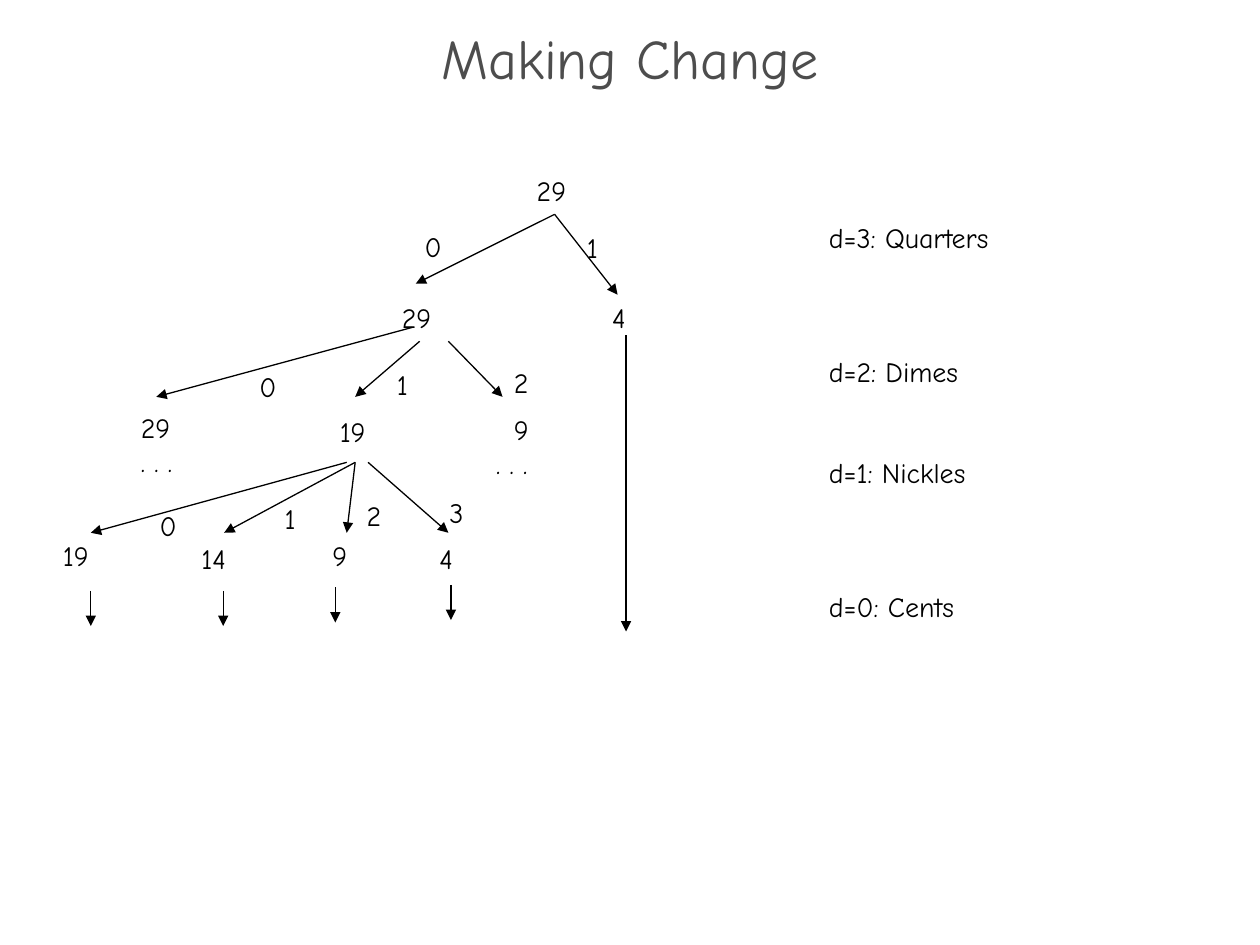
"""Build the Making Change slide: a coin-counting recursion tree."""
from lxml import etree
from pptx import Presentation
from pptx.dml.color import RGBColor
from pptx.enum.shapes import MSO_CONNECTOR
from pptx.enum.text import MSO_ANCHOR, MSO_AUTO_SIZE, PP_ALIGN
from pptx.oxml.ns import qn
from pptx.util import Cm, Pt

STRAIGHT = MSO_CONNECTOR.STRAIGHT
MIDDLE, TOP = MSO_ANCHOR.MIDDLE, MSO_ANCHOR.TOP
GROW, FIXED = MSO_AUTO_SIZE.SHAPE_TO_FIT_TEXT, MSO_AUTO_SIZE.NONE
CENTER, LEFT = PP_ALIGN.CENTER, PP_ALIGN.LEFT
BLACK = RGBColor(0x00, 0x00, 0x00)
GRAY = RGBColor(0x4D, 0x4D, 0x4D)
FONT = "Comic Neue"

TITLE = "Making Change"
COINS = [("d=3: Quarters", 0), ("d=2: Dimes", 3),
         ("d=1: Nickles", 2), ("d=0: Cents", 3)]
LINE_PT = 19.15

AMOUNTS = [
    ("29", 10.57, 3.38),
    ("29", 7.85, 5.94), ("4", 12.09, 5.94),
    ("19", 6.6, 8.23),
    ("19", 1.02, 10.74), ("14", 3.81, 10.8), ("9", 6.45, 10.74), ("4", 8.61, 10.8),
]
CHOICES = [
    ("0", 8.31, 4.5), ("1", 11.58, 4.52),
    ("0", 4.98, 7.32), ("1", 7.75, 7.29), ("2", 10.11, 7.24),
    ("0", 2.97, 10.13), ("1", 5.49, 9.98), ("2", 7.14, 9.93), ("3", 8.81, 9.86),
]
UNFINISHED = [("29", 2.59, 8.15, 0), ("9", 9.75, 8.2, 0.36)]

BRANCHES = [
    (11.18, 4.32, 8.38, 5.72), (11.18, 4.32, 12.45, 5.94),
    (8.31, 6.6, 3.15, 8), (8.46, 6.88, 7.16, 8), (9.04, 6.88, 10.13, 8),
    (12.62, 6.76, 12.62, 12.73),
]
NICKEL_FAN = [(6.99, 1.83), (7.16, 4.52), (7.16, 6.99), (7.42, 9.04)]
FAN_TOP, FAN_BOTTOM = 9.32, 10.74
CENT_DROPS = [(1.83, 11.91), (4.5, 11.91), (6.76, 11.84), (9.09, 11.79)]
DROP = 0.71


def add_text(slide, lines, x, y, w, h, size=16, color=BLACK, align=LEFT, **frame):
    sp = slide.shapes.add_textbox(Cm(x), Cm(y), Cm(w), Cm(h))
    tf = sp.text_frame
    values = {"word_wrap": False, "auto_size": GROW, "vertical_anchor": TOP, **frame}
    for name, value in values.items():
        setattr(tf, name, value)
    for i, line in enumerate(lines):
        p = tf.add_paragraph() if i else tf.paragraphs[0]
        p.alignment = align
        r = p.add_run()
        r.text = line
        for name, value in {"name": FONT, "size": Pt(size)}.items():
            setattr(r.font, name, value)
        r.font.color.rgb = color
    return tf


def add_arrow(slide, x1, y1, x2, y2):
    sp = slide.shapes.add_connector(STRAIGHT, Cm(x1), Cm(y1), Cm(x2), Cm(y2))
    sp.line.width = Pt(0.75)
    sp.line.color.rgb = BLACK
    etree.SubElement(sp.line._get_or_add_ln(), qn("a:tailEnd"), type="triangle")
    etree.SubElement(sp._element.spPr, qn("a:effectLst"))


def main():
    prs = Presentation()
    prs.slide_width, prs.slide_height = Cm(25.4), Cm(19.05)
    slide = prs.slides.add_slide(prs.slide_layouts[6])

    tf = add_text(slide, [TITLE], 0, 0.69, 25.4, 1.27, 32, GRAY, CENTER,
                  word_wrap=True, auto_size=FIXED, vertical_anchor=MIDDLE)
    tf.paragraphs[0].line_spacing = 0.7

    tf = add_text(slide, [coin for coin, _ in COINS], 16.46, 4.32, 4.32, 9.14)
    for p, (_, gap) in zip(tf.paragraphs, COINS):
        p.space_before = Pt(gap * LINE_PT)

    for text, x, y in AMOUNTS + CHOICES:
        add_text(slide, [text], x, y, 0.5 + 0.36 * len(text), 0.94)
    for text, x, y, indent in UNFINISHED:
        tf = add_text(slide, [text, ". . ."], x, y, 1.45, 1.63)
        tf.paragraphs[0]._p.get_or_add_pPr().set("marL", str(Cm(indent)))

    fan = [(x1, FAN_TOP, x2, FAN_BOTTOM) for x1, x2 in NICKEL_FAN]
    drops = [(x, y, x, y + DROP) for x, y in CENT_DROPS]
    for ends in BRANCHES + fan + drops:
        add_arrow(slide, *ends)

    prs.save("out.pptx")


if __name__ == "__main__":
    main()
